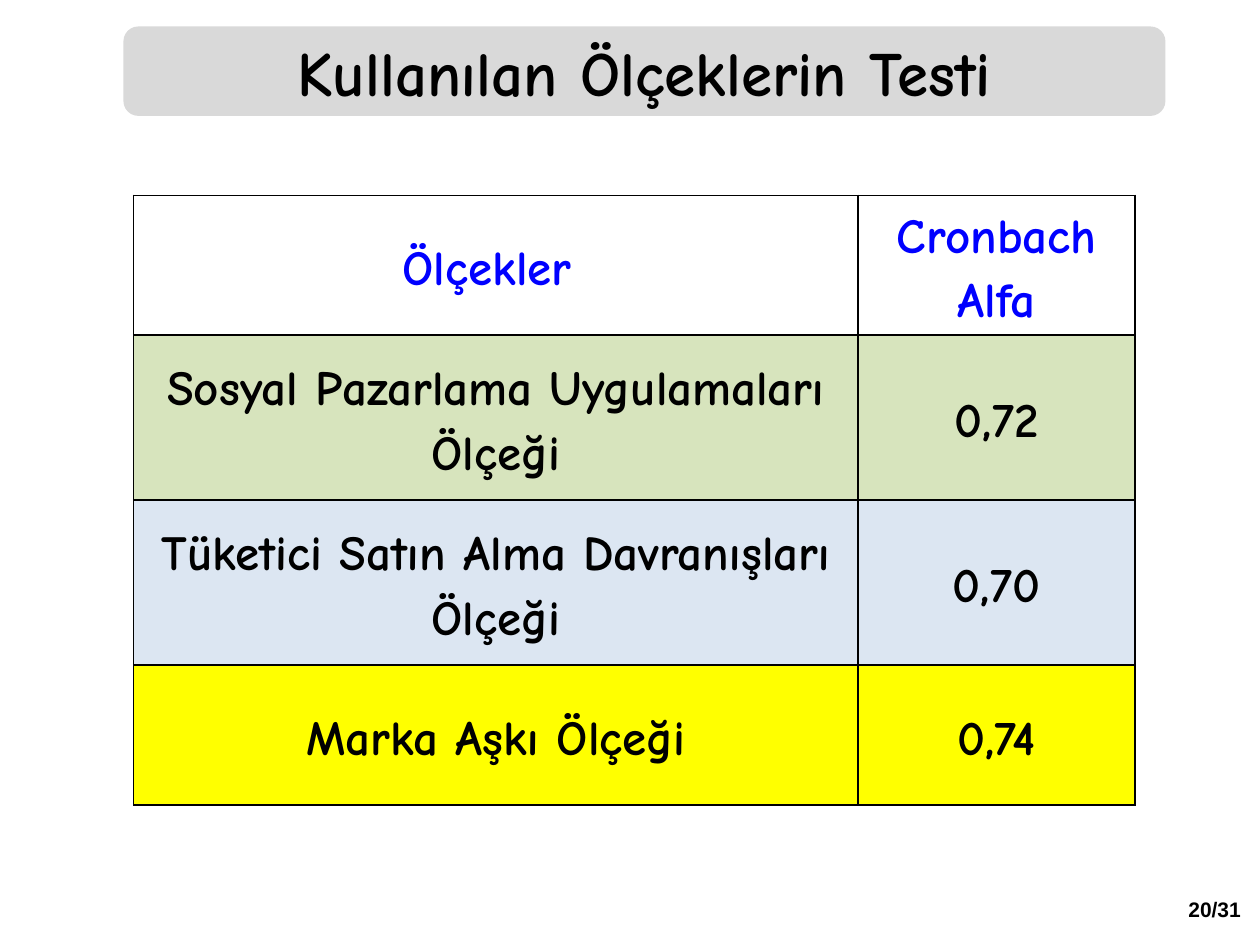
from lxml import etree
from pptx import Presentation
from pptx import util as u
from pptx.dml.color import RGBColor
from pptx.enum import shapes, text
from pptx.oxml.ns import qn

COLORS = {"black": "000000", "blue": "0000FF", "white": "FFFFFF", "grey": "D9D9D9",
          "green": "D7E4BD", "pale blue": "DCE6F2", "yellow": "FFFF00"}


def write(frame, wording, color, font_format, line_spacing=None):
    paragraph = frame.paragraphs[0]
    paragraph.alignment = text.PP_ALIGN.CENTER
    paragraph.line_spacing = line_spacing
    run = paragraph.add_run()
    run.text = wording
    for name, value in font_format.items():
        setattr(run.font, name, value)
    run.font.color.rgb = RGBColor.from_string(COLORS[color])


def add_borders(cell, color, width):
    properties = cell._tc.get_or_add_tcPr()
    for position, side in enumerate(("lnL", "lnR", "lnT", "lnB")):
        line = etree.Element(qn(f"a:{side}"), w=str(width))
        fill = etree.SubElement(line, qn("a:solidFill"))
        etree.SubElement(fill, qn("a:srgbClr"), val=COLORS[color])
        properties.insert(position, line)


presentation = Presentation()
presentation.slide_width = u.Inches(10)
presentation.slide_height = u.Inches(7.5)
slide = presentation.slides.add_slide(presentation.slide_layouts[6])

# Page number
page_number = slide.shapes.add_textbox(u.Inches(9.32), u.Inches(7.07), u.Inches(0.64), u.Inches(0.3))
page_number.text_frame.word_wrap = False
page_number.text_frame.auto_size = text.MSO_AUTO_SIZE.SHAPE_TO_FIT_TEXT
write(page_number.text_frame, "20/31", "black", {"name": "Arial", "size": u.Pt(12), "bold": True})

# Title bar
title = slide.shapes.add_shape(shapes.MSO_SHAPE.FLOWCHART_ALTERNATE_PROCESS,
                               u.Inches(0.98), u.Inches(0.21), u.Inches(8.27), u.Inches(0.71))
title.shadow.inherit = False
title.fill.solid()
title.fill.fore_color.rgb = RGBColor.from_string(COLORS["grey"])
title.line.fill.background()
title_format = {"word_wrap": True, "vertical_anchor": text.MSO_ANCHOR.MIDDLE,
                "auto_size": text.MSO_AUTO_SIZE.SHAPE_TO_FIT_TEXT}
for name, value in title_format.items():
    setattr(title.text_frame, name, value)
write(title.text_frame, "Kullanılan Ölçeklerin Testi", "black",
      {"name": "Comic Neue", "size": u.Pt(36), "bold": True})

# Scale reliability table: wording, text color, fill, row height
rows = [
    (("Ölçekler\u00a0".replace("\u00a0", chr(160)), "Cronbach Alfa"), "blue", "white", 1.11),
    (("Sosyal Pazarlama Uygulamaları Ölçeği", "0,72"), "black", "green", 1.31),
    (("Tüketici Satın Alma Davranışları Ölçeği", "0,70"), "black", "pale blue", 1.31),
    (("Marka Aşkı Ölçeği", "0,74"), "black", "yellow", 1.11),
]
column_widths = [5.75, 2.2]
table = slide.shapes.add_table(len(rows), len(column_widths), u.Inches(1.06), u.Inches(1.55),
                               u.Inches(sum(column_widths)), u.Inches(4.84)).table
for column, width in zip(table.columns, column_widths):
    column.width = u.Inches(width)

cell_format = {"margin_left": u.Inches(0.07), "margin_right": u.Inches(0.07),
               "margin_top": 0, "margin_bottom": 0, "vertical_anchor": text.MSO_ANCHOR.MIDDLE}
cell_font = {"name": "Comic Neue", "size": u.Pt(28), "bold": True}
for row, (wordings, text_color, fill_color, height) in zip(table.rows, rows):
    row.height = u.Inches(height)
    for cell, wording in zip(row.cells, wordings):
        for name, value in cell_format.items():
            setattr(cell, name, value)
        cell.fill.solid()
        cell.fill.fore_color.rgb = RGBColor.from_string(COLORS[fill_color])
        add_borders(cell, "black", u.Pt(1))
        write(cell.text_frame, wording, text_color, cell_font, 1.15)

presentation.save("out.pptx")
